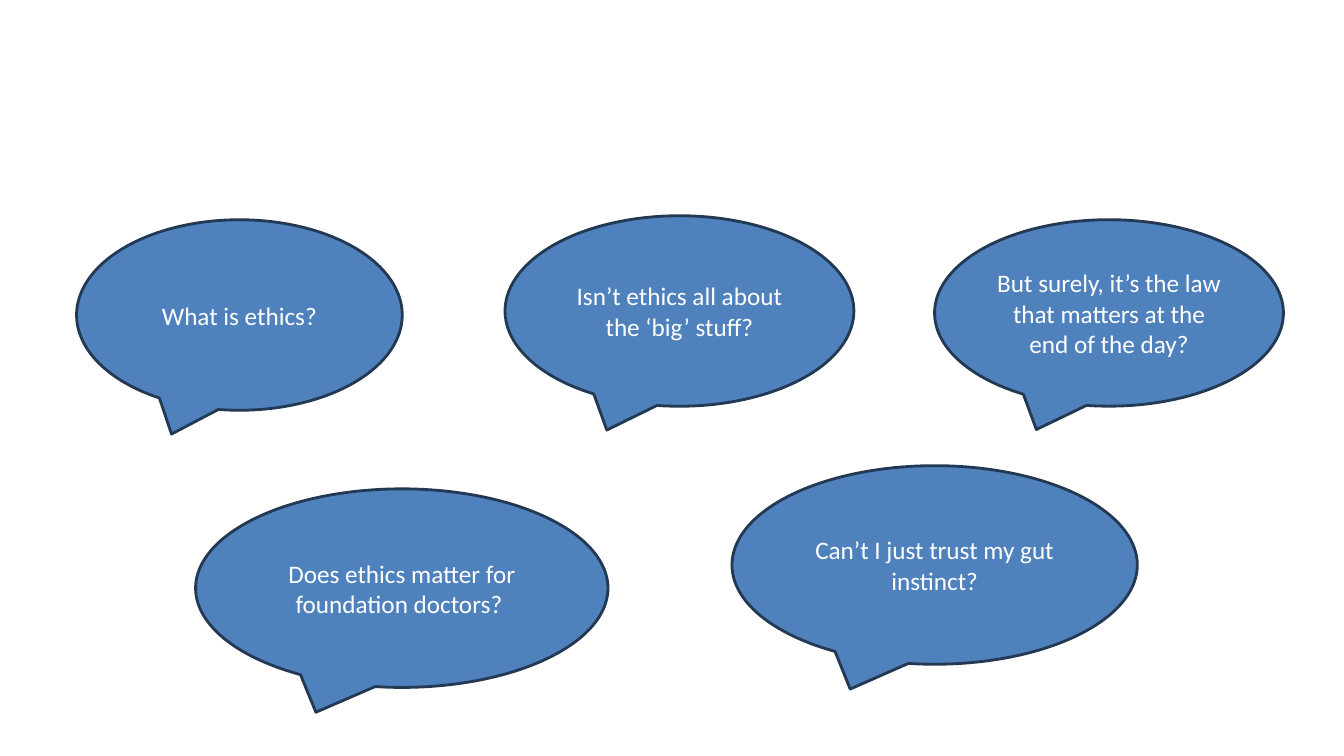
from pptx import Presentation
from pptx.dml.color import RGBColor
from pptx.enum.shapes import MSO_SHAPE
from pptx.enum.text import MSO_ANCHOR, PP_ALIGN
from pptx.util import Inches, Pt

CALLOUT = MSO_SHAPE.OVAL_CALLOUT
MIDDLE = MSO_ANCHOR.MIDDLE
CENTER = PP_ALIGN.CENTER

COLOURS = {"bubble": "4F81BD", "outline": "233953", "text": "FFFFFF"}

# Question, then left, top, width and height of its bubble in inches
QUESTIONS = [
    ("What is ethics?", (0.76, 2.18, 3.23, 1.89)),
    ("Does ethics matter for foundation doctors? ", (1.94, 4.85, 4.09, 1.97)),
    ("Isn’t ethics all about the ‘big’ stuff?", (5.01, 2.14, 3.46, 1.89)),
    ("Can’t I just trust my gut instinct?", (7.26, 4.62, 4.02, 1.97)),
    ("But surely, it’s the law that matters at the end of the day?",
     (9.27, 2.18, 3.46, 1.85)),
]


def colour(name):
    return RGBColor.from_string(COLOURS[name])


def add_bubble(slide, question, box):
    bubble = slide.shapes.add_shape(CALLOUT, *map(Inches, box))
    bubble.shadow.inherit = False
    bubble.fill.solid()
    bubble.fill.fore_color.rgb = colour("bubble")
    bubble.line.color.rgb = colour("outline")
    bubble.line.width = Pt(2)

    frame = bubble.text_frame
    frame.text = question
    frame.word_wrap = True
    frame.vertical_anchor = MIDDLE
    paragraph = frame.paragraphs[0]
    paragraph.alignment = CENTER
    font = paragraph.runs[0].font
    font.name = "Calibri"
    font.size = Pt(18)
    font.color.rgb = colour("text")


def main():
    presentation = Presentation()
    presentation.slide_width = Inches(13.33)
    presentation.slide_height = Inches(7.5)
    slide = presentation.slides.add_slide(presentation.slide_layouts[6])
    for question, box in QUESTIONS:
        add_bubble(slide, question, box)
    presentation.save("out.pptx")


if __name__ == "__main__":
    main()
